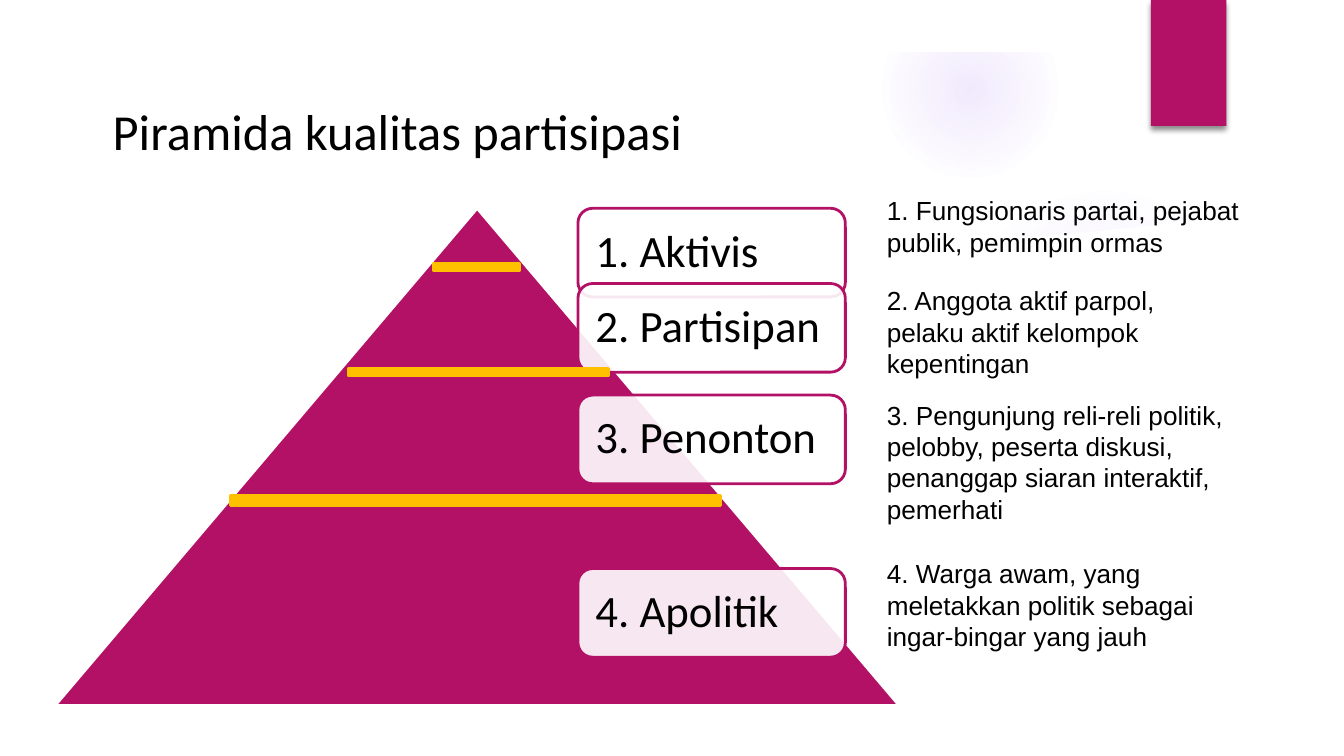
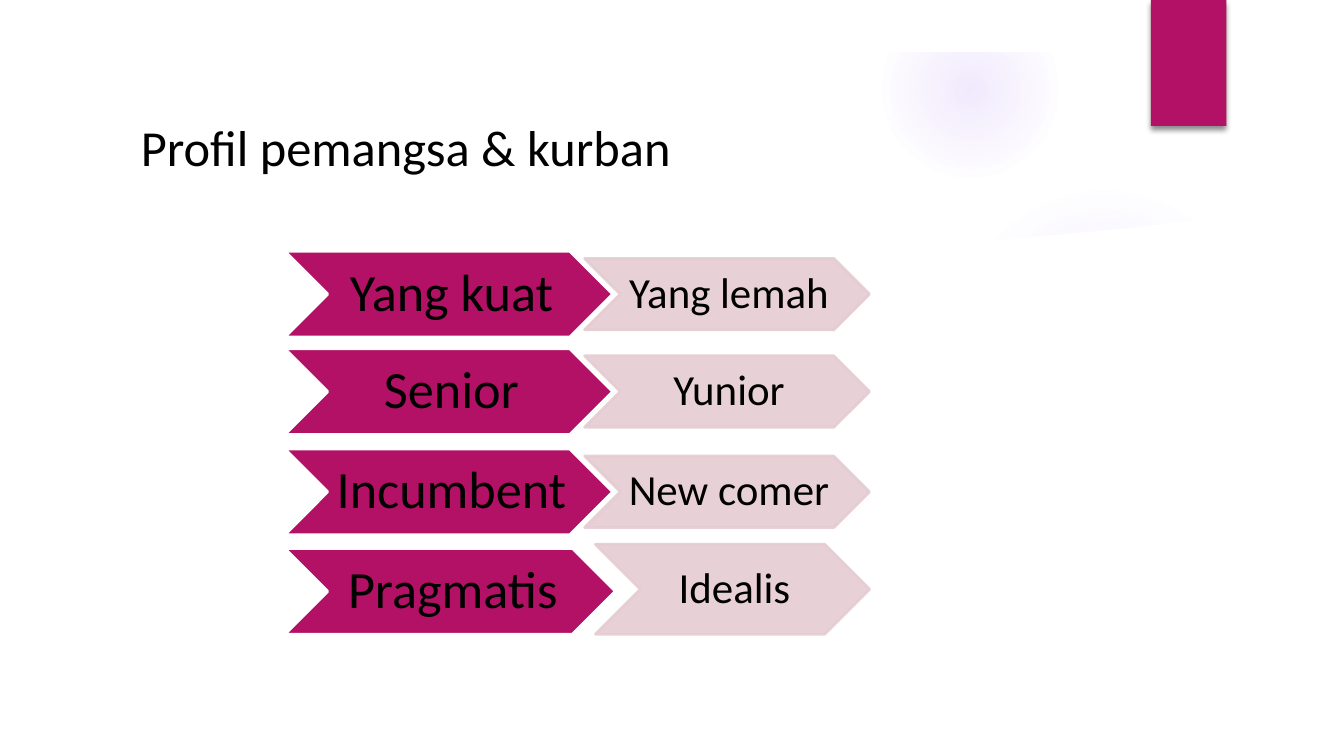
from dataclasses import dataclass
from typing import Any

import pptx
import pptx.dml.color
import pptx.enum.shapes
import pptx.enum.text
import pptx.oxml
import pptx.oxml.ns
import pptx.util

Pt = pptx.util.Pt
SHAPE = pptx.enum.shapes.MSO_SHAPE
ALIGN = pptx.enum.text.PP_ALIGN
ANCHOR = pptx.enum.text.MSO_ANCHOR
NS = pptx.oxml.ns.nsdecls("a")

MAGENTA, PINK, GOLD = "B31166", "E5CCD3", "FFC000"
WHITE, BLACK, LILAC = "FFFFFF", "000000", "9B6BF2"
WIDTH, HEIGHT, MARGIN = 720, 405, 28
LINE_WIDTH = 1.5
PANEL_EDGE = [
    (27.4, 110.2), (51, 113.8), (85.7, 117.4), (216.7, 128.9), (302, 133.2),
    (396, 133.9), (482.4, 131.8), (512.6, 130.3), (542.2, 128.2),
    (572.4, 125.3), (602.6, 122.4), (633, 118.8), (648, 117.4),
    (663.1, 115.2), (693.4, 110.2),
]


@dataclass(frozen=True)
class Box:
    """Position and size in points."""
    x: float
    y: float
    w: float
    h: float

    def emu(self) -> list[int]:
        """Return the four lengths for python-pptx."""
        return [Pt(v) for v in (self.x, self.y, self.w, self.h)]


@dataclass(frozen=True)
class Style:
    """Look of a filled shape."""
    fill: str
    line: str | None = None
    fill_alpha: int = 100
    line_alpha: int = 100


@dataclass(frozen=True)
class TextStyle:
    """Look of a text block; insets run left, top, right, bottom."""
    size: float
    font: str = "Calibri"
    align: Any = ALIGN.LEFT
    anchor: Any = ANCHOR.MIDDLE
    insets: tuple[float, ...] = (7.2, 3.6, 7.2, 3.6)
    spacing: float = 1.0
    hanging: float = 0


@dataclass(frozen=True)
class Glow:
    """Soft radial spot with (position, opacity) stops in percent."""
    box: Box
    stops: tuple[tuple[int, int], ...]


@dataclass(frozen=True)
class Level:
    """One step of the pyramid with its explanation."""
    label: str
    top: float
    note: str
    note_box: Box


@dataclass(frozen=True)
class Chevron:
    """One labelled arrow."""
    text: str
    box: Box
    style: Style
    text_style: TextStyle


GLOWS = [
    Glow(Box(508.5, 99, 166.5, 166.5), ((0, 7), (36, 6), (69, 0))),
    Glow(Box(472.5, 0.7, 94.5, 94.5), ((0, 14), (36, 7), (73, 0))),
]
TITLE = TextStyle(27)
LABEL = TextStyle(24, insets=(7.2,) * 4, spacing=0.9)
NOTE = TextStyle(14, "Arial", anchor=ANCHOR.TOP, hanging=13.5)
STRONG_TEXT = TextStyle(28, align=ALIGN.CENTER, insets=(2.9, 1.4, 0, 1.4), spacing=0.9)
WEAK_TEXT = TextStyle(23, align=ALIGN.CENTER, insets=(2.2, 1.4, 0, 1.4), spacing=0.9)
MAIN = Style(MAGENTA, WHITE)
CARD = Style(WHITE, MAGENTA, 90)
WEAK = Style(PINK, PINK, 90, 90)
LEVELS = [
    Level("1. Aktivis", 111.6, "1. Fungsionaris partai, pejabat publik, pemimpin ormas",
          Box(468, 100.8, 205, 41)),
    Level("2. Partisipan", 151.9, "2. Anggota aktif parpol, pelaku aktif kelompok kepentingan",
          Box(468, 149, 199, 58)),
    Level("3. Penonton", 211.7, "3. Pengunjung reli-reli politik, pelobby, peserta diskusi, "
          "penanggap siaran interaktif, pemerhati", Box(468, 210.2, 205, 75)),
    Level("4. Apolitik", 304.6, "4. Warga awam, yang meletakkan politik sebagai "
          "ingar-bingar yang jauh", Box(468, 295.2, 189, 75)),
]
DIVIDERS = [Box(223.9, 134.6, 62.6, 17.3), Box(161.3, 190.8, 190, 17.3),
            Box(76.3, 257, 357, 22.3)]
PAIRS = [("Yang kuat", "Yang lemah", 134.6), ("Senior", "Yunior", 186.8),
         ("Incumbent", "New comer", 240.5)]


def paint(color: Any, value: str, alpha: int = 100) -> None:
    """Set a colour format to a hex colour with an opacity in percent."""
    color.rgb = pptx.dml.color.RGBColor.from_string(value)
    if alpha < 100:
        node = color._xFill.find(pptx.oxml.ns.qn("a:srgbClr"))
        node.append(pptx.oxml.parse_xml(f'<a:alpha {NS} val="{alpha * 1000}"/>'))


def apply(target: Any, values: dict[str, Any]) -> None:
    """Set each named attribute on the target."""
    for name, value in values.items():
        setattr(target, name, value)


def dress(sp: Any, style: Style) -> Any:
    """Give a shape its fill and line, without a shadow."""
    sp.shadow.inherit = False
    sp.fill.solid()
    paint(sp.fill.fore_color, style.fill, style.fill_alpha)
    if style.line is None:
        sp.line.fill.background()
    else:
        sp.line.width = Pt(LINE_WIDTH)
        sp.line.fill.solid()
        paint(sp.line.color, style.line, style.line_alpha)
    return sp


def write(sp: Any, text: str, style: TextStyle) -> None:
    """Write one paragraph into a shape."""
    tf = sp.text_frame
    sides = ("margin_left", "margin_top", "margin_right", "margin_bottom")
    apply(tf, {"word_wrap": True, "vertical_anchor": style.anchor,
               **{side: Pt(v) for side, v in zip(sides, style.insets)}})
    p = tf.paragraphs[0]
    apply(p, {"alignment": style.align, "line_spacing": style.spacing})
    if style.hanging:
        apply(p._p.get_or_add_pPr(), {"marL": Pt(style.hanging), "indent": -Pt(style.hanging)})
    r = p.add_run()
    r.text = text
    apply(r.font, {"size": Pt(style.size), "name": style.font})
    paint(r.font.color, BLACK)


def add_shape(s: Any, kind: Any, box: Box, style: Style) -> Any:
    """Draw a preset shape."""
    return dress(s.shapes.add_shape(kind, *box.emu()), style)


def add_text(s: Any, box: Box, text: str, style: TextStyle) -> None:
    """Draw a text box."""
    write(s.shapes.add_textbox(*box.emu()), text, style)


def add_glow(s: Any, glow: Glow) -> None:
    """Draw a circle that fades outwards."""
    sp = add_shape(s, SHAPE.OVAL, glow.box, Style(LILAC))
    stops = "".join(
        f'<a:gs pos="{pos * 1000}"><a:srgbClr val="{LILAC}">'
        f'<a:alpha val="{alpha * 1000}"/></a:srgbClr></a:gs>' for pos, alpha in glow.stops)
    grad = pptx.oxml.parse_xml(
        f'<a:gradFill {NS}><a:gsLst>{stops}</a:gsLst><a:path path="circle">'
        '<a:fillToRect l="50000" t="50000" r="50000" b="50000"/></a:path></a:gradFill>')
    pr = sp._element.spPr
    pr.replace(pr.find(pptx.oxml.ns.qn("a:solidFill")), grad)


def add_backdrop(s: Any) -> None:
    """Draw the glows, the white panel and frame, and the corner band."""
    for glow in GLOWS:
        add_glow(s, glow)
    right, bottom = WIDTH - MARGIN, HEIGHT - MARGIN
    points = [(Pt(x), Pt(y)) for x, y in PANEL_EDGE + [(right, bottom), (MARGIN, bottom)]]
    builder = s.shapes.build_freeform(*points[0])
    builder.add_line_segments(points[1:], close=True)
    dress(builder.convert_to_shape(), Style(WHITE))
    frame = add_shape(s, SHAPE.FRAME, Box(0, 0, WIDTH, HEIGHT), Style(WHITE))
    frame.adjustments[0] = MARGIN / HEIGHT
    band = add_shape(s, SHAPE.RECTANGLE, Box(616.5, 0, 40.5, 67.5), Style(MAGENTA))
    effects = band._element.spPr.find(pptx.oxml.ns.qn("a:effectLst"))
    effects.append(pptx.oxml.parse_xml(
        f'<a:outerShdw {NS} blurRad="{Pt(3)}" dist="{Pt(2)}" dir="5400000" rotWithShape="0">'
        f'<a:srgbClr val="{BLACK}"><a:alpha val="45000"/></a:srgbClr></a:outerShdw>'))


def add_slide(prs: Any, title: str, x: float, y: float) -> Any:
    """Add a slide with the shared backdrop and a title."""
    s = prs.slides.add_slide(prs.slide_layouts[6])
    add_backdrop(s)
    add_text(s, Box(x, y, 517.7, 41.8), title, TITLE)
    return s


def add_pyramid(s: Any) -> None:
    """Draw the participation pyramid with labels, dividers and notes."""
    add_shape(s, SHAPE.ISOSCELES_TRIANGLE, Box(29.5, 111.6, 452.2, 266.4), MAIN)
    for level in LEVELS:
        card = add_shape(s, SHAPE.ROUNDED_RECTANGLE, Box(309.6, level.top, 143.3, 47.5), CARD)
        write(card, level.label, LABEL)
    for box in DIVIDERS:
        add_shape(s, SHAPE.MATH_MINUS, box, Style(GOLD, GOLD))
    for level in LEVELS:
        add_text(s, level.note_box, level.note, NOTE)


def add_profiles(s: Any) -> None:
    """Draw the pairs of strong and weak profiles."""
    chevrons = []
    for strong, weak, top in PAIRS:
        chevrons += [
            Chevron(strong, Box(152.6, top, 175.7, 46), MAIN, STRONG_TEXT),
            Chevron(weak, Box(313.2, top + 3.9, 152.6, 38.2), WEAK, WEAK_TEXT),
        ]
    chevrons += [
        Chevron("Idealis", Box(319, 291.6, 146.9, 48.2), WEAK, WEAK_TEXT),
        Chevron("Pragmatis", Box(152.6, 293.8, 177.1, 46), MAIN, STRONG_TEXT),
    ]
    for c in chevrons:
        write(add_shape(s, SHAPE.CHEVRON, c.box, c.style), c.text, c.text_style)


def main() -> None:
    """Build and save the presentation."""
    prs = pptx.Presentation()
    apply(prs, {"slide_width": Pt(WIDTH), "slide_height": Pt(HEIGHT)})
    add_pyramid(add_slide(prs, "Piramida kualitas partisipasi", 53.3, 49))
    add_profiles(add_slide(prs, "Profil pemangsa & kurban", 68.4, 57.6))
    prs.save("out.pptx")


if __name__ == "__main__":
    main()
